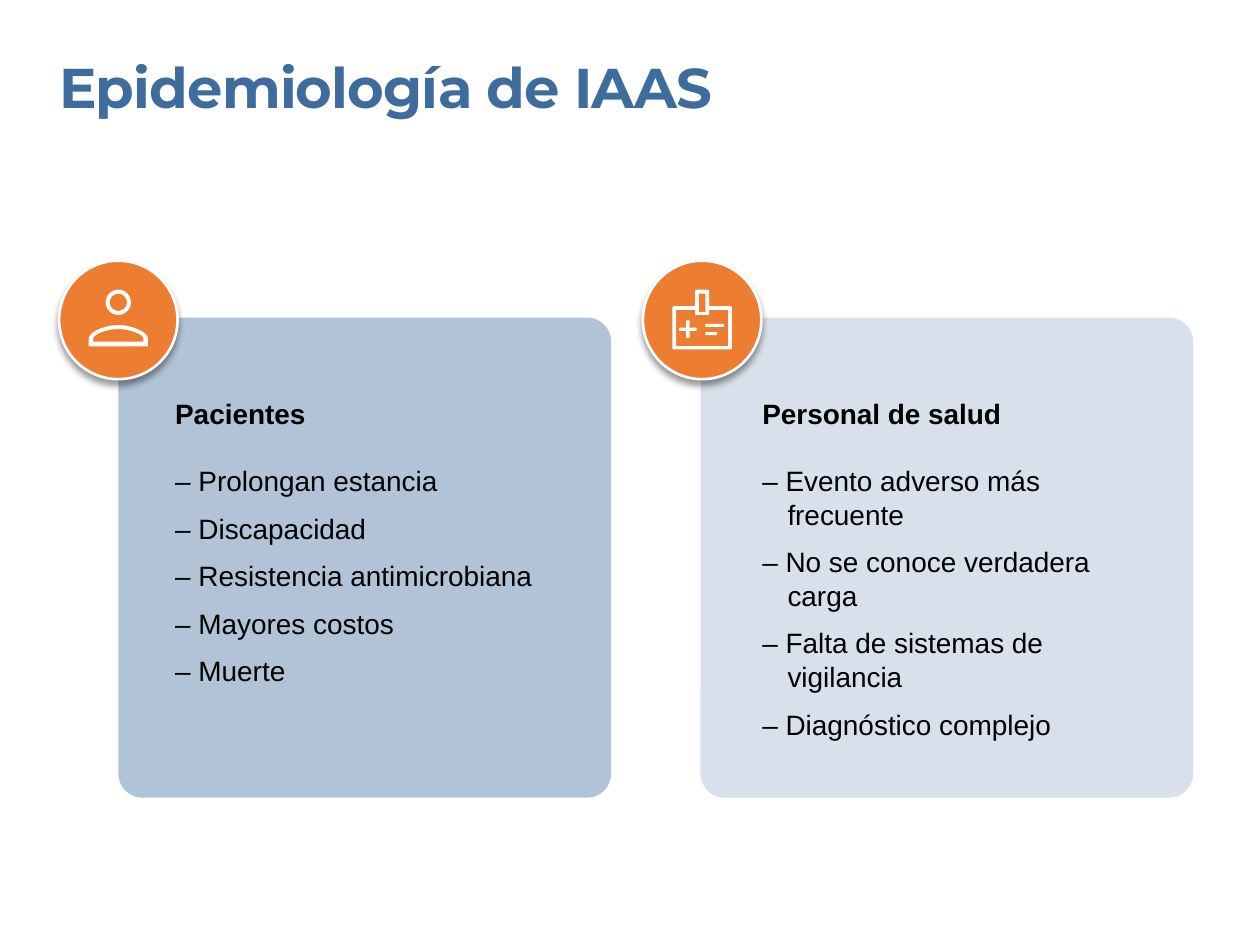
import math

from lxml import etree
from pptx import Presentation
from pptx import util as u
from pptx.dml.color import RGBColor
from pptx.enum import shapes, text
from pptx.oxml import ns

BLUE = RGBColor(0x3D, 0x6C, 0x9D)
ORANGE = RGBColor(0xED, 0x7D, 0x31)
WHITE = RGBColor(0xFF, 0xFF, 0xFF)
BLACK = RGBColor(0, 0, 0)

CARD_TOP, CARD_WIDTH, CARD_HEIGHT = 181.5, 281.5, 274.3
BADGE_TOP, BADGE_SIZE = 149, 67.7
TEXT_TOP = 226.8

PATIENTS = ["– Prolongan estancia", "– Discapacidad", "– Resistencia antimicrobiana",
            "– Mayores costos", "– Muerte"]
STAFF = ["– Evento adverso más frecuente", "– No se conoce verdadera carga",
         "– Falta de sistemas de vigilancia", "– Diagnóstico complejo"]


def add_sub(parent, tag, **attributes):
    return etree.SubElement(parent, ns.qn(tag), attributes)


def add_box(page, left, top, width, height):
    box = page.shapes.add_textbox(u.Pt(left), u.Pt(top), u.Pt(width), u.Pt(height))
    frame = box.text_frame
    frame.margin_left = frame.margin_right = frame.margin_top = frame.margin_bottom = 0
    frame.word_wrap = True
    frame.auto_size = text.MSO_AUTO_SIZE.SHAPE_TO_FIT_TEXT
    return frame


def set_text(para, words, size, font, color, bold):
    para.text = words
    for span in para.runs:
        span.font.size = u.Pt(size)
        span.font.name = font
        span.font.color.rgb = color
        span.font.bold = bold


def add_title(page, words):
    para = add_box(page, 33.8, 30.2, 615.6, 38.9).paragraphs[0]
    set_text(para, words, 32, "Montserrat", BLUE, True)
    para.runs[0].font._element.set("spc", "-50")


def add_card(page, left, opacity):
    card = page.shapes.add_shape(shapes.MSO_SHAPE.ROUNDED_RECTANGLE, u.Pt(left),
                                 u.Pt(CARD_TOP), u.Pt(CARD_WIDTH), u.Pt(CARD_HEIGHT))
    card.adjustments[0] = 0.05
    card.shadow.inherit = False
    card.line.fill.background()
    card.fill.solid()
    card.fill.fore_color.rgb = BLUE
    color = card._element.spPr.find(".//" + ns.qn("a:srgbClr"))
    add_sub(color, "a:alpha", val=str(opacity * 1000))


def add_list(page, left, width, height, heading, items, hanging):
    frame = add_box(page, left, TEXT_TOP, width, height)
    para = frame.paragraphs[0]
    set_text(para, heading, 16, "Arial", BLACK, True)
    para.space_after = u.Pt(19)
    for item in items:
        para = frame.add_paragraph()
        set_text(para, item, 16, "Arial", BLACK, False)
        para.space_after = u.Pt(8)
        if hanging:
            properties = para._p.get_or_add_pPr()
            properties.set("marL", str(u.Pt(hanging)))
            properties.set("indent", str(-u.Pt(hanging)))


def add_badge(page, left):
    badge = page.shapes.add_shape(shapes.MSO_SHAPE.OVAL, u.Pt(left), u.Pt(BADGE_TOP),
                                  u.Pt(BADGE_SIZE), u.Pt(BADGE_SIZE))
    badge.fill.solid()
    badge.fill.fore_color.rgb = ORANGE
    badge.line.color.rgb = WHITE
    badge.line.width = u.Pt(1.5)
    badge.shadow.inherit = False
    effects = badge._element.spPr.find(ns.qn("a:effectLst"))
    shadow = add_sub(effects, "a:outerShdw", blurRad=str(u.Pt(4)), dist=str(u.Pt(3)),
                     dir="5400000", rotWithShape="0")
    color = add_sub(shadow, "a:srgbClr", val=str(BLACK))
    add_sub(color, "a:alpha", val="40000")


# Icon outlines: points relative to the badge centre
def circle(y, radius, steps=36):
    angles = [2 * math.pi * step / steps for step in range(steps)]
    return [(radius * math.cos(a), y + radius * math.sin(a)) for a in angles]


def curve(a, b, c, d, steps=12):
    return [tuple((1 - t) ** 3 * p + 3 * (1 - t) ** 2 * t * q + 3 * (1 - t) * t * t * r
                  + t ** 3 * s for p, q, r, s in zip(a, b, c, d))
            for t in (step / steps for step in range(steps + 1))]


def rounded(corners, radius):
    points = []
    for i, corner in enumerate(corners):
        ends = []
        for other in (corners[i - 1], corners[(i + 1) % len(corners)]):
            share = radius / math.dist(corner, other)
            ends.append(tuple(p + (q - p) * share for p, q in zip(corner, other)))
        points += curve(ends[0], corner, corner, ends[1], 6)
    return points


def rectangle(left, top, right, bottom):
    return [(left, top), (right, top), (right, bottom), (left, bottom)]


def shoulders(half, bottom, side, bend, top):
    left = curve((-half, side), (-half, bend), (-half * 0.42, top), (0, top))
    right = [(-x, y) for x, y in reversed(left)]
    return [(-half, bottom)] + left + right + [(half, bottom)]


def clipped_card(half, top, bottom, clip_y, radius):
    return rounded([(-half, top), (-4, top), (-4, clip_y), (4, clip_y), (4, top),
                    (half, top), (half, bottom), (-half, bottom)], radius)


def person():
    return [circle(-10.1, 7.2), circle(-10.1, 4.9),
            shoulders(16.9, 15.1, 10.8, 6.5, 2.9), shoulders(14.4, 12.4, 10.8, 8, 5.2)]


def id_card():
    plus = [(-1, -5), (1, -5), (1, -1), (5, -1), (5, 1), (1, 1),
            (1, 5), (-1, 5), (-1, 1), (-5, 1), (-5, -1), (-1, -1)]
    return [clipped_card(17, -7.9, 16.8, -17.3, 2), clipped_card(14.9, -5.8, 14.9, -2.9, 1),
            rectangle(-1.9, -15.1, 1.9, -4.5), [(x - 8.2, y + 5.3) for x, y in plus],
            rectangle(1.9, 2.2, 12.4, 4), rectangle(1.9, 6.9, 8.4, 8.7)]


def add_icon(page, center_x, outlines):
    center_y = BADGE_TOP + BADGE_SIZE / 2
    builder = None
    for outline in outlines:
        first, *rest = [(u.Pt(center_x + x), u.Pt(center_y + y)) for x, y in outline]
        if builder is None:
            builder = page.shapes.build_freeform(*first)
        else:
            builder.move_to(*first)
        builder.add_line_segments(rest, close=True)
    icon = builder.convert_to_shape()
    icon.shadow.inherit = False
    icon.fill.solid()
    icon.fill.fore_color.rgb = WHITE
    icon.line.fill.background()


def main():
    deck = Presentation()
    deck.slide_width, deck.slide_height = u.Pt(720), u.Pt(540)
    page = deck.slides.add_slide(deck.slide_layouts[6])

    # Title and cards
    add_title(page, "Epidemiología de IAAS")
    add_card(page, 67.7, 40)
    add_card(page, 400.3, 20)

    # Lists
    add_list(page, 100.1, 216.7, 167.8, "Pacientes", PATIENTS, 0)
    add_list(page, 435.6, 210.2, 198.7, "Personal de salud", STAFF, 14.4)

    # Badges with their icons
    for left, outlines in ((33.8, person()), (367.4, id_card())):
        add_badge(page, left)
        add_icon(page, left + BADGE_SIZE / 2, outlines)

    deck.save("out.pptx")


if __name__ == "__main__":
    main()
